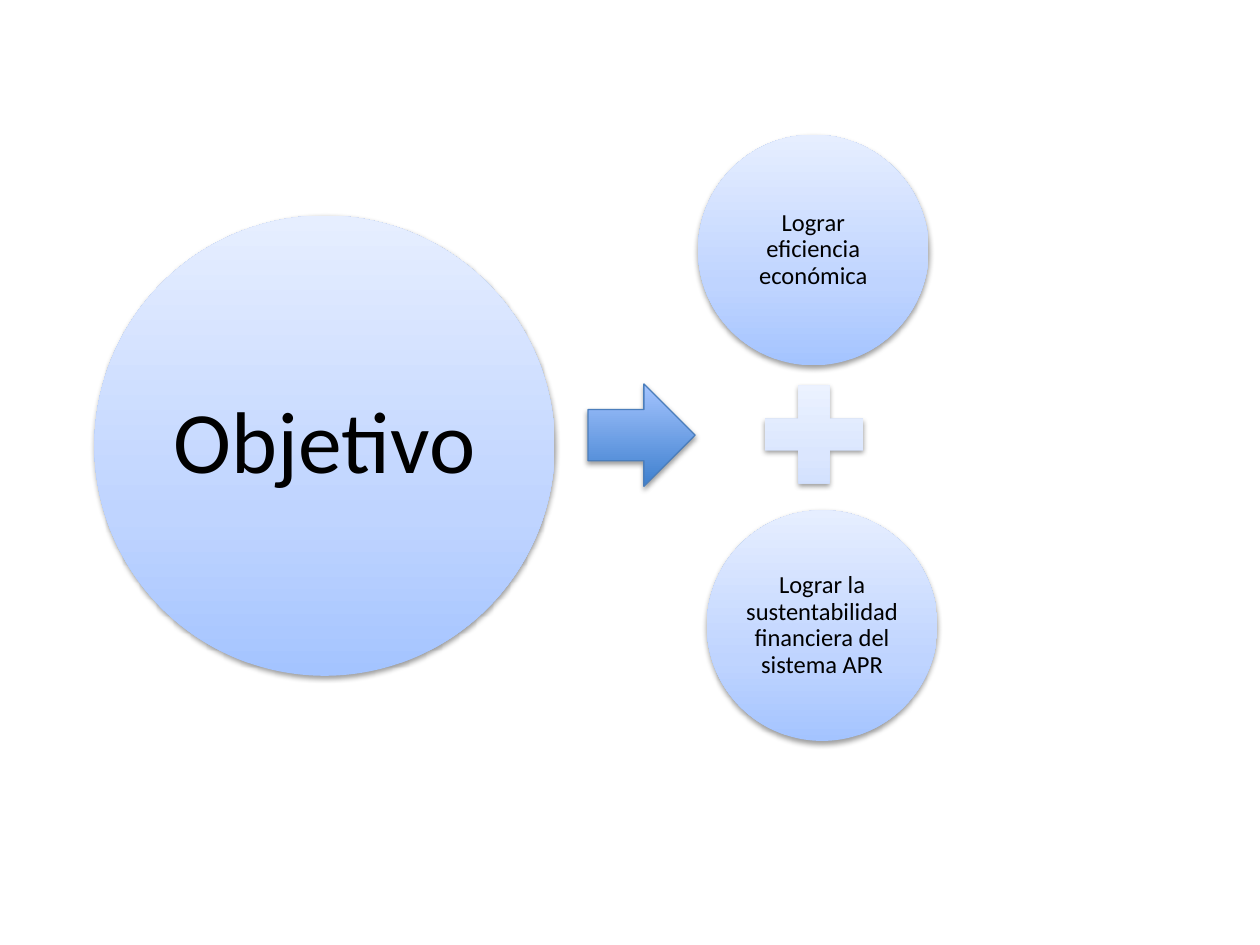
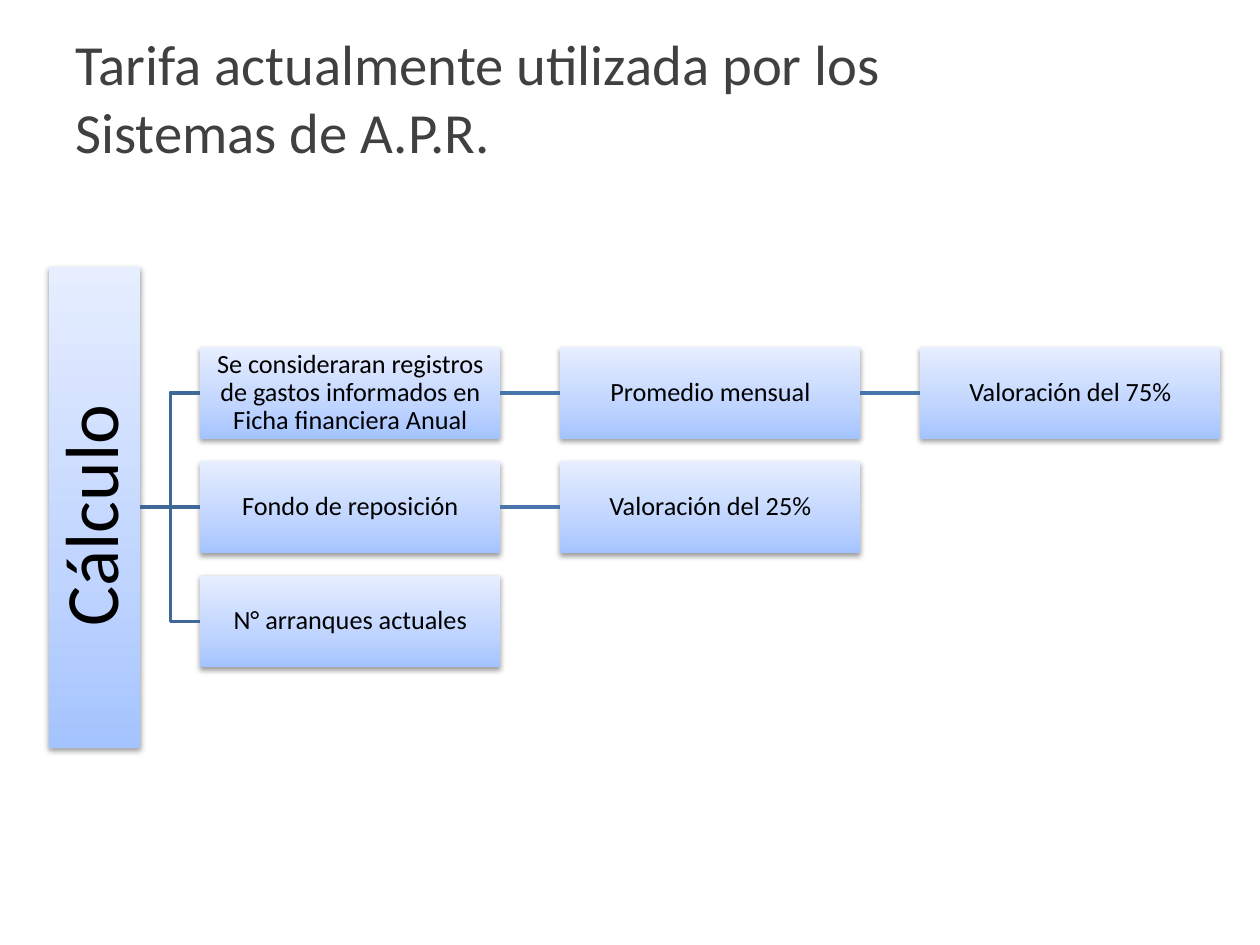
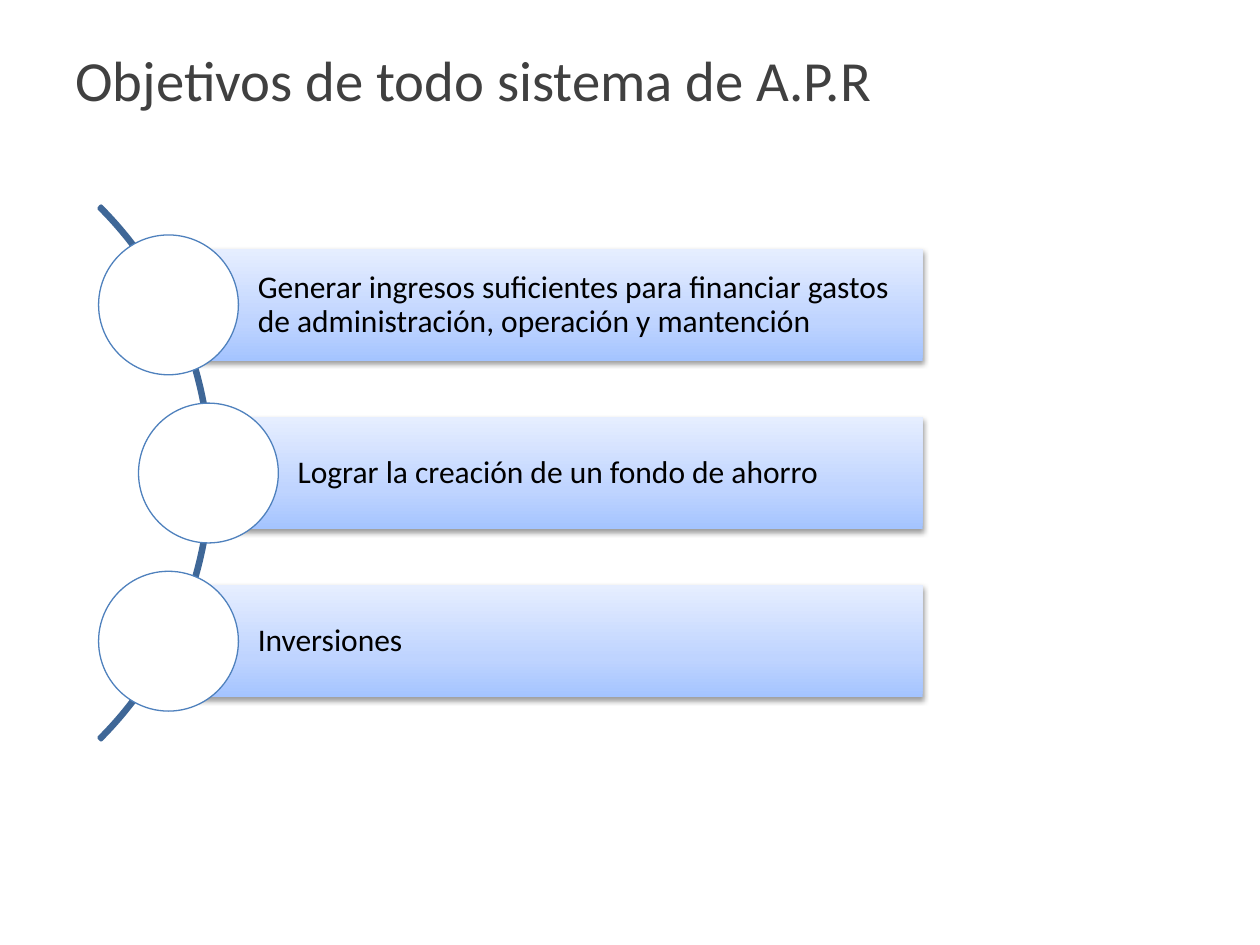
import math

import pptx
import pptx.dml.color
import pptx.enum.shapes
import pptx.enum.text
import pptx.oxml.ns
import pptx.util
from lxml import etree

Pt = pptx.util.Pt
SHAPE = pptx.enum.shapes.MSO_SHAPE
CONNECTOR = pptx.enum.shapes.MSO_CONNECTOR
ALIGN = pptx.enum.text.PP_ALIGN
MIDDLE = pptx.enum.text.MSO_ANCHOR.MIDDLE
qn = pptx.oxml.ns.qn

FONT = "Calibri"
COLORS = {
    "text": "000000", "title": "404040", "white": "FFFFFF", "shadow": "000000",
    "trunk": "3F6797", "branch": "4875AC", "ring": "4F81BD", "arrow_edge": "4B7EBC",
}
# Gradient stops run from the bottom edge to the top edge
GRADIENTS = {
    "node": [(0, "A4C4FF"), (35, "BFD4FF"), (100, "E6EEFF")],
    "plus": [(0, "CDDDFE"), (35, "DBE6FE"), (100, "F0F5FF")],
    "arrow": [(0, "3F80CE"), (100, "A4C4FF")],
}


def rgb(key):
    return pptx.dml.color.RGBColor.from_string(COLORS[key])


def apply(target, formats):
    for attribute, value in formats.items():
        setattr(target, attribute, value)


def add_color(parent, color):
    return etree.SubElement(parent, qn("a:srgbClr"), val=color)


# Shared styling
def write(shape, text, size, color="text", align=ALIGN.CENTER, spacing=0.9, insets=(1, 1, 1, 1)):
    frame = shape.text_frame
    sides = ("margin_left", "margin_top", "margin_right", "margin_bottom")
    apply(frame, {"word_wrap": True, "vertical_anchor": MIDDLE,
                  **{side: Pt(inset) for side, inset in zip(sides, insets)}})
    paragraph = frame.paragraphs[0]
    apply(paragraph, {"alignment": align, "line_spacing": spacing})
    run = paragraph.add_run()
    run.text = text
    apply(run.font, {"name": FONT, "size": Pt(size)})
    run.font.color.rgb = rgb(color)


def add_plain(slide, kind, left, top, width, height, line=None, weight=0.75):
    shape = slide.shapes.add_shape(kind, Pt(left), Pt(top), Pt(width), Pt(height))
    shape.shadow.inherit = False
    if line:
        shape.line.color.rgb = rgb(line)
        shape.line.width = Pt(weight)
    else:
        shape.line.fill.background()
    return shape


def add_glossy(slide, kind, left, top, width, height, gradient="node", line=None):
    shape = add_plain(slide, kind, left, top, width, height, line)
    shape.fill.gradient()
    shape.fill.gradient_angle = 90
    properties = shape.element.spPr
    stops = properties.find(".//" + qn("a:gsLst"))
    for stop in list(stops):
        stops.remove(stop)
    for position, color in GRADIENTS[gradient]:
        add_color(etree.SubElement(stops, qn("a:gs"), pos=str(position * 1000)), color)
    # Soft shadow straight below
    shadow = etree.SubElement(properties.find(qn("a:effectLst")), qn("a:outerShdw"),
                              blurRad=str(Pt(3.1)), dist=str(Pt(1.6)), dir="5400000",
                              rotWithShape="0")
    etree.SubElement(add_color(shadow, COLORS["shadow"]), qn("a:alpha"), val="38000")
    return shape


def add_title(slide, text, width, height):
    title = slide.shapes.add_textbox(Pt(36), Pt(21.6), Pt(width), Pt(height))
    write(title, text, 32.4, "title", ALIGN.LEFT, 1.0, (7.2, 3.6, 7.2, 3.6))


def join(slide, parent, child, color, kind=CONNECTOR.STRAIGHT):
    link = slide.shapes.add_connector(kind, 0, 0, 0, 0)
    link.begin_connect(parent, 3)
    link.end_connect(child, 1)
    link.line.color.rgb = rgb(color)
    link.line.width = Pt(2)
    etree.SubElement(link.element.spPr, qn("a:effectLst"))


# Slide 1: goal made of two parts
def build_goal(slide, left, top):
    part = 131.8
    for text, x, y in (("Lograr eficiencia económica", 344.9, 0),
                       ("Lograr la sustentabilidad financiera del sistema APR", 349.9, 214.6)):
        circle = add_glossy(slide, SHAPE.OVAL, left + x, top + y, part, part)
        write(circle, text, 14)
    add_glossy(slide, SHAPE.MATH_PLUS, left + 373, top + 133.2, 76.3, 76.3, "plus")
    goal = add_glossy(slide, SHAPE.OVAL, left, top + 46.2, 263, 263)
    write(goal, "Objetivo", 50, insets=(5, 5, 5, 5))
    add_glossy(slide, SHAPE.RIGHT_ARROW, left + 282, top + 142.4, 61.2, 58.5,
               "arrow", "arrow_edge")


# Slide 2: calculation tree, each row a chain of steps
def build_tree(slide, left, top, height, root_text, rows):
    bar, step_width, gap, row_pitch = 52.4, 171.4, 34.3, 65.3
    middle = top + height / 2
    root = add_glossy(slide, SHAPE.RECTANGLE, left, top, bar, height)
    write(root, root_text, 43, insets=(2, 2, 2, 2))
    root.text_frame._txBody.bodyPr.set("vert", "vert270")
    for row, steps in enumerate(rows):
        offset = row - (len(rows) - 1) / 2
        previous = root
        for column, text in enumerate(steps):
            step = add_glossy(slide, SHAPE.RECTANGLE,
                              left + bar + gap + column * (step_width + gap),
                              middle + offset * row_pitch - bar / 2, step_width, bar)
            write(step, text, 15)
            if previous is root:
                join(slide, root, step, "trunk", CONNECTOR.ELBOW if offset else CONNECTOR.STRAIGHT)
            else:
                join(slide, previous, step, "branch")
            previous = step


# Slide 3: bars whose circles sit along an arc
def build_arc_list(slide, right, middle, items):
    radius, center_x = 215.6, -94.7
    circle_size, bar_height, pitch = 79.9, 64, 96.1
    arc = add_plain(slide, SHAPE.BLOCK_ARC, center_x - radius, middle - radius,
                    2 * radius, 2 * radius, "trunk", 2)
    arc.fill.background()
    for index, adjustment in enumerate((189, 27, 0.004)):
        arc.adjustments[index] = adjustment
    for index, text in enumerate(items):
        rise = (index - (len(items) - 1) / 2) * pitch
        x = center_x + math.sqrt((radius - 1.8) ** 2 - rise ** 2)
        y = middle + rise
        bar = add_glossy(slide, SHAPE.RECTANGLE, x, y - bar_height / 2, right - x, bar_height)
        write(bar, text, 18, align=ALIGN.LEFT, insets=(51, 3.6, 3.6, 3.6))
        circle = add_plain(slide, SHAPE.OVAL, x - circle_size / 2, y - circle_size / 2,
                           circle_size, circle_size, "ring")
        circle.fill.solid()
        circle.fill.fore_color.rgb = rgb("white")


def main():
    deck = pptx.Presentation()
    apply(deck, {"slide_width": Pt(720), "slide_height": Pt(540)})
    goal, tariff, objectives = (deck.slides.add_slide(deck.slide_layouts[6]) for _ in range(3))

    build_goal(goal, 54, 77)

    add_title(tariff, "Tarifa actualmente utilizada por los Sistemas de A.P.R.", 570, 67.7)
    build_tree(tariff, 27.8, 152.3, 275, "Cálculo ", [
        ["Se consideraran registros de gastos informados en Ficha financiera Anual",
         "Promedio mensual", "Valoración del 75%"],
        ["Fondo de reposición", "Valoración del 25%"],
        ["N° arranques actuales"],
    ])

    add_title(objectives, "Objetivos de todo sistema de A.P.R", 555, 47.5)
    build_arc_list(objectives, 527.3, 270.3, [
        "Generar ingresos suficientes para financiar gastos de administración, "
        "operación y mantención",
        "Lograr la creación de un fondo de ahorro",
        "Inversiones",
    ])
    deck.save("out.pptx")


if __name__ == "__main__":
    main()
